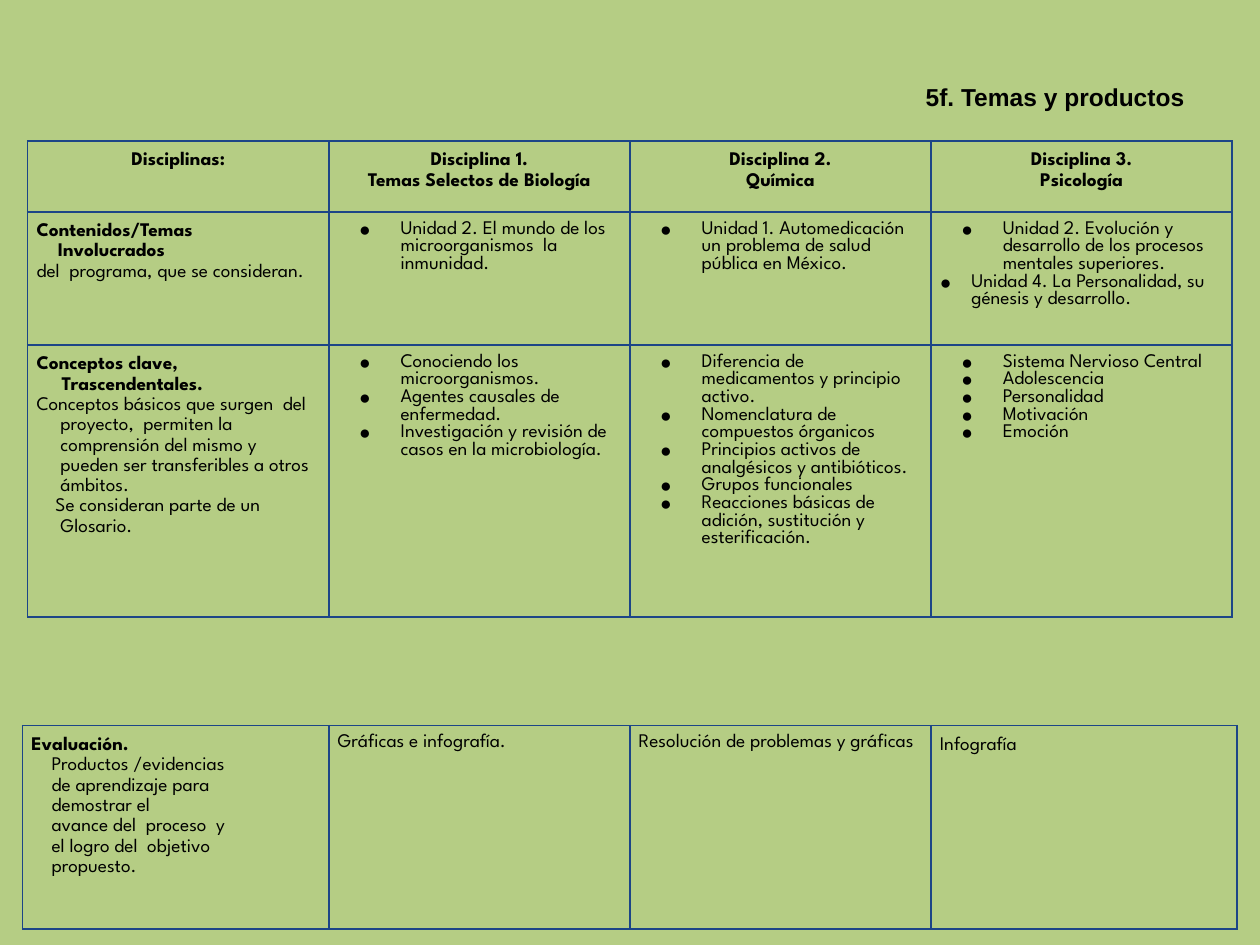
import pptx
import pptx.dml.color
import pptx.enum.text
import pptx.oxml
import pptx.oxml.ns
import pptx.util

Inches = pptx.util.Inches
Pt = pptx.util.Pt
ALIGN = pptx.enum.text.PP_ALIGN

BACKGROUND, BORDER, INK = "B5CD84", "1C4587", "000000"
FONT = "League Spartan"
TITLE = "5f. Temas y productos"

# Style: alignment, left indent, first-line indent, line spacing, bold, bullet
STYLES = {
    "header": (ALIGN.CENTER, 0, 0, 1.15, True, False),
    "label": (ALIGN.LEFT, 0, 0, 1.15, True, False),
    "label_second": (ALIGN.LEFT, 0.17, 0, 1.15, True, False),
    "label_third": (ALIGN.LEFT, 0.2, 0, 1.15, True, False),
    "justified": (ALIGN.JUSTIFY, 0.2, -0.2, 1.15, False, False),
    "hanging": (ALIGN.LEFT, 0.19, -0.19, 1.15, False, False),
    "glossary": (ALIGN.LEFT, 0.19, -0.04, 1.15, False, False),
    "indented": (ALIGN.LEFT, 0.16, 0, 1.15, False, False),
    "plain": (ALIGN.LEFT, 0, 0, 1.0, False, False),
    "loose": (ALIGN.LEFT, 0, 0, 1.15, False, False),
    "bullet": (ALIGN.LEFT, 0.5, -0.33, 1.0, False, True),
    "bullet_outer": (ALIGN.LEFT, 0.25, -0.25, 1.0, False, True),
}


def styled(style, *lines):
    return [(line, style) for line in lines]


TOPICS = [
    [
        styled("header", "Disciplinas:"),
        styled("header", "Disciplina 1.", "Temas Selectos de Biología"),
        styled("header", "Disciplina 2.", "Química"),
        styled("header", "Disciplina 3.", "Psicología"),
    ],
    [
        styled("label", "Contenidos/Temas")
        + styled("label_second", "Involucrados")
        + styled("justified", "del  programa, que se consideran."),
        styled("bullet", "Unidad 2. El mundo de los microorganismos  la inmunidad."),
        styled("bullet", "Unidad 1. Automedicación un problema de salud pública en México."),
        styled("bullet", "Unidad 2. Evolución y desarrollo de los procesos mentales superiores.")
        + styled("bullet_outer", "Unidad 4. La Personalidad, su génesis y desarrollo."),
    ],
    [
        styled("label", "Conceptos clave,")
        + styled("label_third", "Trascendentales.")
        + styled("hanging", "Conceptos básicos que surgen  del proyecto,  permiten la comprensión "
                 "del mismo y  pueden ser transferibles a otros ámbitos.")
        + styled("glossary", "Se consideran parte de un  Glosario."),
        styled("bullet", "Conociendo los microorganismos.", "Agentes causales de enfermedad.",
               "Investigación y revisión de casos en la microbiología."),
        styled("bullet", "Diferencia de medicamentos y principio activo.",
               "Nomenclatura de compuestos órganicos",
               "Principios activos de analgésicos y antibióticos.",
               "Grupos funcionales",
               "Reacciones básicas de adición, sustitución y esterificación."),
        styled("bullet", "Sistema Nervioso Central", "Adolescencia", "Personalidad",
               "Motivación", "Emoción"),
    ],
]
EVALUATION = [
    [
        styled("label", "Evaluación.")
        + styled("indented", "Productos /evidencias", "de aprendizaje para", "demostrar el",
                 "avance del  proceso  y", "el logro del  objetivo", "propuesto."),
        styled("plain", "Gráficas e infografía."),
        styled("plain", "Resolución de problemas y gráficas"),
        styled("loose", "Infografía"),
    ],
]

# Each table: left, top, column widths, row heights, content
TABLES = [
    (0.22, 1.12, [2.39] * 4, [0.46, 0.98, 1.91], TOPICS),
    (0.18, 5.76, [2.43, 2.39, 2.39, 2.43], [1.43], EVALUATION),
]


def color(value):
    return pptx.dml.color.RGBColor.from_string(value)


def format_font(font, name, size, bold):
    font.name, font.size, font.bold = name, Pt(size), bold
    font.color.rgb = color(INK)


def xml(tag, attributes="", inner=""):
    namespace = pptx.oxml.ns.nsdecls("a")
    return pptx.oxml.parse_xml(f"<a:{tag} {namespace} {attributes}>{inner}</a:{tag}>")


def write_paragraph(paragraph, text, style):
    align, left, first, spacing, bold, bullet = STYLES[style]
    paragraph.text = text
    paragraph.alignment = align
    paragraph.line_spacing = spacing
    format_font(paragraph.runs[0].font, FONT, 11, bold)
    properties = paragraph._p.get_or_add_pPr()
    properties.set("marL", str(Inches(left)))
    properties.set("indent", str(Inches(first)))
    if bullet:
        properties.append(xml("buClr", inner=f'<a:srgbClr val="{INK}"/>'))
        properties.append(xml("buFont", 'typeface="Arial"'))
        properties.append(xml("buChar", 'char="●"'))


def fill_cell(cell, lines):
    cell.margin_left = cell.margin_right = Inches(0.07)
    cell.margin_top = cell.margin_bottom = Inches(0.07)
    frame = cell.text_frame
    for index, (text, style) in enumerate(lines):
        paragraph = frame.add_paragraph() if index else frame.paragraphs[0]
        write_paragraph(paragraph, text, style)
    properties = cell._tc.get_or_add_tcPr()
    for side in ("lnL", "lnR", "lnT", "lnB"):
        properties.append(xml(side, f'w="{Pt(1)}"',
                              f'<a:solidFill><a:srgbClr val="{BORDER}"/></a:solidFill>'))
    cell.fill.background()


def add_grid(page, left, top, widths, heights, content):
    table = page.shapes.add_table(
        len(heights), len(widths), Inches(left), Inches(top),
        Inches(sum(widths)), Inches(sum(heights))).table
    table.first_row = table.horz_banding = False
    for column, width in zip(table.columns, widths):
        column.width = Inches(width)
    for row, height, cells in zip(table.rows, heights, content):
        row.height = Inches(height)
        for cell, lines in zip(row.cells, cells):
            fill_cell(cell, lines)


def add_title(page):
    box = page.shapes.add_textbox(Inches(0.5), Inches(0.3), Inches(9), Inches(0.94))
    frame = box.text_frame
    frame.word_wrap = True
    frame.vertical_anchor = pptx.enum.text.MSO_ANCHOR.MIDDLE
    frame.text = TITLE
    frame.paragraphs[0].alignment = ALIGN.RIGHT
    format_font(frame.paragraphs[0].runs[0].font, "Arial", 14, True)


def main():
    deck = pptx.Presentation()
    deck.slide_width, deck.slide_height = Inches(10), Inches(7.5)
    page = deck.slides.add_slide(deck.slide_layouts[6])
    page.background.fill.solid()
    page.background.fill.fore_color.rgb = color(BACKGROUND)
    add_title(page)
    for grid in TABLES:
        add_grid(page, *grid)
    deck.save("out.pptx")


if __name__ == "__main__":
    main()
